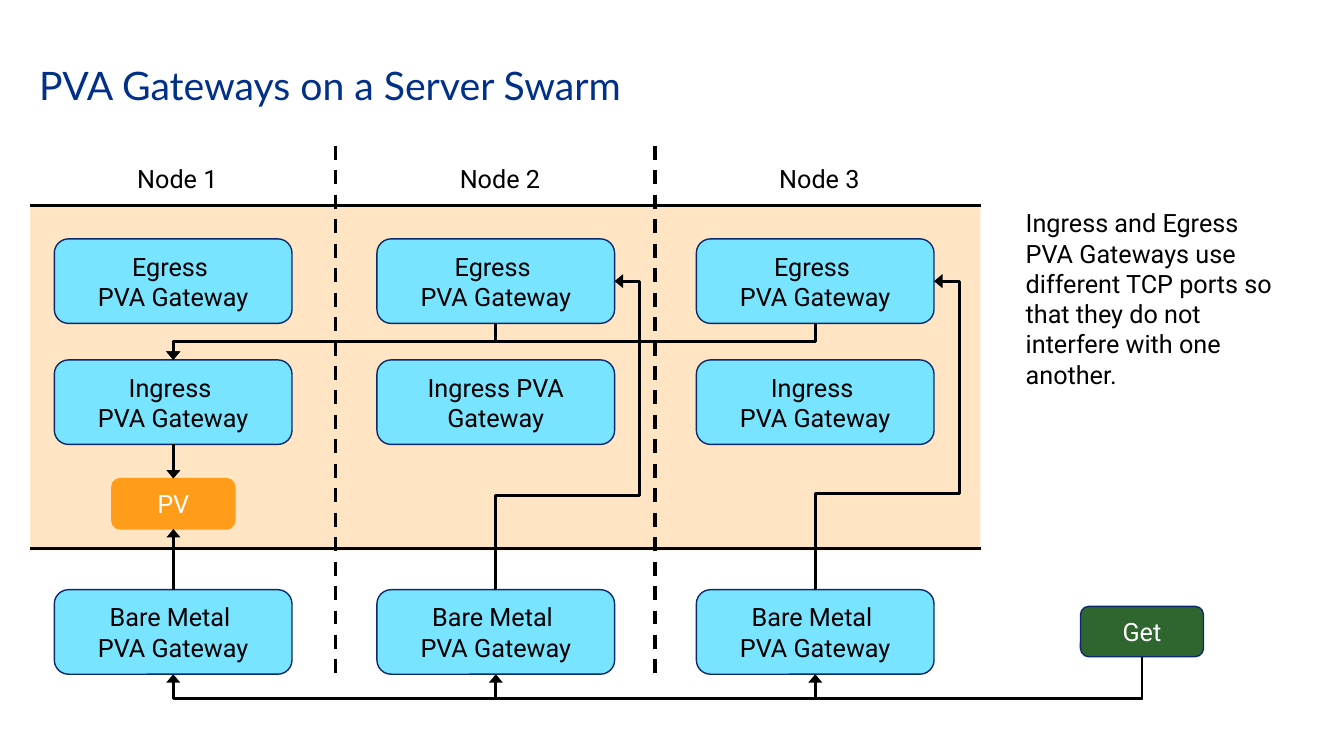
from lxml import etree
from pptx import Presentation
from pptx.dml.color import RGBColor
from pptx.enum import dml, shapes, text
from pptx.oxml import ns
from pptx.util import Cm, Pt

BLACK, WHITE, NAVY = "000000", "FFFFFF", "0D296D"
GATEWAY_W, GATEWAY_H = 5.99, 2.13
BUTTON_W, BUTTON_H = 3.1, 1.27
NODE_LEFTS = [1.37, 9.5, 17.55]
EGRESS_TOP, INGRESS_TOP, BARE_METAL_TOP = 6.02, 9.07, 14.86
TURNS = {1: 0.695, 2: 0.688}  # height at which each bare metal route turns

prs = Presentation()
prs.slide_width, prs.slide_height = Cm(33.87), Cm(19.05)
slide = prs.slides.add_slide(prs.slide_layouts[6])


def rgb(value):
    return RGBColor.from_string(value)


def write(shape, lines, size=18, font="Roboto", color=BLACK, anchor="TOP",
          align="LEFT", spacing=1.0):
    frame = shape.text_frame
    frame.word_wrap = True
    frame.vertical_anchor = text.MSO_ANCHOR[anchor]
    for index, line in enumerate(lines):
        paragraph = frame.paragraphs[0] if index == 0 else frame.add_paragraph()
        paragraph.text = line
        paragraph.alignment = text.PP_ALIGN[align]
        paragraph.line_spacing = spacing
        formats = {"size": Pt(size), "name": font}
        for name, value in formats.items():
            setattr(paragraph.font, name, value)
        paragraph.font.color.rgb = rgb(color)


def add_label(box, lines, **formats):
    write(slide.shapes.add_textbox(*map(Cm, box)), lines, **formats)


def add_block(box, fill, border=None, lines=(), color=BLACK, kind="ROUNDED_RECTANGLE"):
    block = slide.shapes.add_shape(shapes.MSO_SHAPE[kind], *map(Cm, box))
    block.shadow.inherit = False
    block.fill.solid()
    block.fill.fore_color.rgb = rgb(fill)
    if border:
        block.line.color.rgb = rgb(border)
        block.line.width = Pt(1)
    else:
        block.line.fill.background()
    write(block, lines, color=color, anchor="MIDDLE", align="CENTER")


def add_gateway(left, top, lines):
    add_block((left, top, GATEWAY_W, GATEWAY_H), "78E4FF", NAVY, lines)


def add_line(start, end, width=2, arrow=None, dashed=False, bend=None, adjusts=()):
    """arrow is headEnd or tailEnd; bend names a preset connector shape."""
    line = slide.shapes.add_connector(
        shapes.MSO_CONNECTOR.STRAIGHT, *map(Cm, (*start, *end)))
    line.line.color.rgb = rgb(BLACK)
    line.line.width = Pt(width)
    properties = line._element.spPr
    if dashed:
        line.line.dash_style = dml.MSO_LINE.DASH
    if arrow:
        outline = properties.find(ns.qn("a:ln"))
        etree.SubElement(outline, ns.qn("a:" + arrow), type="triangle", w="lg")
    etree.SubElement(properties, ns.qn("a:effectLst"))
    if bend:
        geometry = properties.find(ns.qn("a:prstGeom"))
        geometry.set("prst", bend)
        guides = geometry.find(ns.qn("a:avLst"))
        for number, adjust in enumerate(adjusts, 1):
            etree.SubElement(guides, ns.qn("a:gd"), name=f"adj{number}",
                             fmla=f"val {round(adjust * 100000)}")
    return line


def add_drop(start, end, turn):
    """Arrow that goes down to turn, left, then vertically to its end."""
    (x1, y1), (x2, y2) = start, end
    across, down = x1 - x2, y2 - y1
    middle_x, middle_y = (x1 + x2) / 2, (y1 + y2) / 2
    # The frame lies on its side and is then rotated a quarter turn.
    left, top = middle_x - down / 2, middle_y - across / 2
    drop = add_line((left, top), (left + down, top + across), arrow="tailEnd",
                    bend="bentConnector3", adjusts=[(turn - y1) / down])
    drop._element.spPr.find(ns.qn("a:xfrm")).set("rot", "5400000")


def add_swarm(left, top, width, height):
    add_block((left, top, width, height), "FFE5C4", kind="RECTANGLE")
    for y in (top, top + height - 0.05):
        add_line((left, y), (left + width, y), width=2.25)
    for x in (8.46, 16.51):
        add_line((x, top - 1.5), (x, top + 11.94), width=2.5, dashed=True)


def add_node(left, index):
    center = left + GATEWAY_W / 2
    ingress = ["Ingress PVA Gateway"] if index == 1 else ["Ingress ", "PVA Gateway"]
    add_label((center - 1.33, 3.99, 2.87, 1.02), [f"Node {index + 1}"], align="CENTER")
    add_gateway(left, EGRESS_TOP, ["Egress ", "PVA Gateway"])
    add_gateway(left, INGRESS_TOP, ingress)
    add_gateway(left, BARE_METAL_TOP, ["Bare Metal ", "PVA Gateway"])
    if index in TURNS:
        right = left + GATEWAY_W
        add_line((right, EGRESS_TOP + GATEWAY_H / 2), (center, BARE_METAL_TOP),
                 arrow="headEnd", bend="bentConnector4",
                 adjusts=[-0.212, TURNS[index]])
        add_drop((center, EGRESS_TOP + GATEWAY_H),
                 (NODE_LEFTS[0] + GATEWAY_W / 2, INGRESS_TOP), turn=8.61)


def add_pv(left, top):
    center, bottom = left + BUTTON_W / 2, top + BUTTON_H
    add_block((left, top, BUTTON_W, BUTTON_H), "FF9D1B", "FF9D1B", ["PV"], WHITE)
    add_line((center, top), (center, INGRESS_TOP + GATEWAY_H), arrow="headEnd")
    add_line((center, bottom), (center, BARE_METAL_TOP), arrow="headEnd")


def add_client(left, top):
    add_block((left, top, BUTTON_W, BUTTON_H), "2F652F", NAVY, ["Get"], WHITE)
    for node_left in NODE_LEFTS:
        add_drop((left + BUTTON_W / 2, top + BUTTON_H),
                 (node_left + GATEWAY_W / 2, BARE_METAL_TOP + GATEWAY_H), turn=17.6)


def main():
    add_label((0.74, 1.02, 29.9, 2.41), ["PVA Gateways on a Server Swarm"],
              size=28, font="Lato", color="003088", anchor="MIDDLE", spacing=0.9)
    add_swarm(0.76, 5.18, 23.95, 8.69)
    for index, left in enumerate(NODE_LEFTS):
        add_node(left, index)
    add_pv(2.82, 12.06)
    add_client(27.23, 15.28)
    add_label((25.6, 5.11, 6.91, 4.88),
              ["Ingress and Egress PVA Gateways use different TCP ports so that "
               "they do not interfere with one another."])
    prs.save("out.pptx")


if __name__ == "__main__":
    main()
